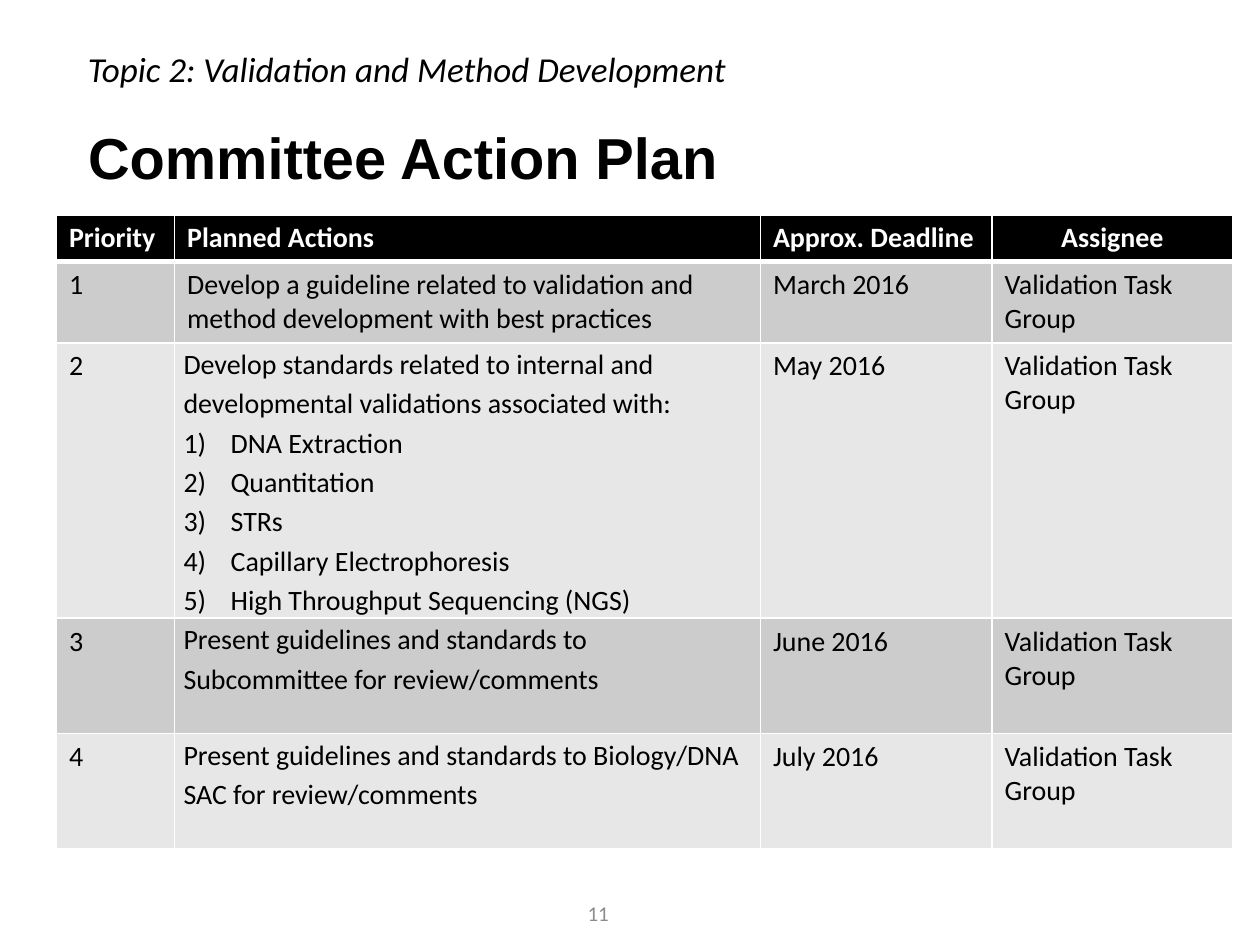
from lxml import etree
from pptx import Presentation
from pptx import util as u
from pptx.dml.color import RGBColor
from pptx.enum import text
from pptx.oxml.ns import qn

COLORS = {"black": "000000", "white": "FFFFFF", "odd": "CCCCCC",
          "even": "E7E7E7", "number": "8C8C8C"}
HEADERS = ["Priority", "Planned Actions", "Approx. Deadline", "Assignee"]
# Each action: opening sentence, numbered items, deadline
ACTIONS = [
    ("Develop a guideline related to validation and method development "
     "with best practices", [], "March 2016"),
    ("Develop standards related to internal and developmental validations "
     "associated with:",
     ["DNA Extraction", "Quantitation", "STRs", "Capillary Electrophoresis",
      "High Throughput Sequencing (NGS)"], "May 2016"),
    ("Present guidelines and standards to Subcommittee for review/comments",
     [], "June 2016"),
    ("Present guidelines and standards to Biology/DNA SAC for review/comments",
     [], "July 2016"),
]
ASSIGNEE = "Validation Task Group"
COLUMN_WIDTHS = [2.38, 11.81, 4.67, 4.85]
ROW_HEIGHTS = [0.93, 1.63, 5.54, 2.32, 2.32]


def color(name):
    return RGBColor.from_string(COLORS[name])


def add_span(para, words, size, shade="black", face="Calibri",
             bold=False, italic=False):
    span = para.add_run()
    span.text = words
    font = span.font
    font.size, font.name = u.Pt(size), face
    font.bold, font.italic = bold, italic
    font.color.rgb = color(shade)


def add_title(page, words):
    title = page.shapes.title
    title.left, title.top = u.Cm(1.52), u.Cm(1.4)
    title.width, title.height = u.Cm(21.9), u.Cm(3.68)
    frame = title.text_frame
    frame.auto_size = text.MSO_AUTO_SIZE.NONE
    frame.vertical_anchor = text.MSO_ANCHOR.MIDDLE
    para = frame.paragraphs[0]
    para.alignment = text.PP_ALIGN.LEFT
    para.line_spacing = 0.9
    add_span(para, words, 33, face="Arial", bold=True)


def add_label(page, place, words, align, anchor, **style):
    box = page.shapes.add_textbox(*map(u.Cm, place))
    frame = box.text_frame
    frame.word_wrap = True
    frame.vertical_anchor = anchor
    para = frame.paragraphs[0]
    para.alignment = align
    add_span(para, words, **style)


def set_borders(cell, top=1, bottom=1):
    properties = cell._tc.get_or_add_tcPr()
    widths = {"lnL": 1, "lnR": 1, "lnT": top, "lnB": bottom}
    for index, (side, width) in enumerate(widths.items()):
        line = etree.Element(qn(f"a:{side}"), w=str(u.Pt(width)))
        fill = etree.SubElement(line, qn("a:solidFill"))
        etree.SubElement(fill, qn("a:srgbClr"), val=COLORS["white"])
        properties.insert(index, line)


def paint(cell, shade):
    cell.fill.solid()
    cell.fill.fore_color.rgb = color(shade)


def number_item(para):
    properties = para._p.get_or_add_pPr()
    indent = u.Cm(0.95)
    properties.set("marL", str(indent))
    properties.set("indent", str(-indent))
    etree.SubElement(properties, qn("a:buFont"), typeface="+mj-lt")
    etree.SubElement(properties, qn("a:buAutoNum"), type="arabicParenR")


def fill_action(cell, sentence, items, spaced):
    frame = cell.text_frame
    add_span(frame.paragraphs[0], sentence, 16)
    for item in items:
        para = frame.add_paragraph()
        number_item(para)
        add_span(para, item, 16)
    if spaced:
        cell.margin_left = cell.margin_right = u.Cm(0.18)
        cell.margin_top = cell.margin_bottom = 0
        for para in frame.paragraphs:
            para.line_spacing = 1.15


def add_plan(page):
    frame = page.shapes.add_table(
        len(ROW_HEIGHTS), len(COLUMN_WIDTHS), u.Cm(1.14), u.Cm(4.33),
        u.Cm(sum(COLUMN_WIDTHS)), u.Cm(sum(ROW_HEIGHTS)))
    table = frame.table
    for column, width in zip(table.columns, COLUMN_WIDTHS):
        column.width = u.Cm(width)
    for row, height in zip(table.rows, ROW_HEIGHTS):
        row.height = u.Cm(height)

    # Header row
    for cell, words in zip(table.rows[0].cells, HEADERS):
        paint(cell, "black")
        set_borders(cell, bottom=3)
        cell.vertical_anchor = text.MSO_ANCHOR.MIDDLE
        add_span(cell.text_frame.paragraphs[0], words, 16, "white", bold=True)
    table.cell(0, 3).text_frame.paragraphs[0].alignment = text.PP_ALIGN.CENTER

    # One row per action, with alternating fills
    for number, (sentence, items, deadline) in enumerate(ACTIONS, 1):
        cells = list(table.rows[number].cells)
        for cell in cells:
            paint(cell, "odd" if number % 2 else "even")
            set_borders(cell, top=3 if number == 1 else 1)
        fill_action(cells[1], sentence, items, spaced=number > 1)
        for index, words in ((0, str(number)), (2, deadline), (3, ASSIGNEE)):
            add_span(cells[index].text_frame.paragraphs[0], words, 16)


def main():
    deck = Presentation()
    deck.slide_width, deck.slide_height = u.Cm(25.4), u.Cm(19.05)
    page = deck.slides.add_slide(deck.slide_layouts[5])
    add_title(page, "Committee Action Plan")
    add_plan(page)
    # Topic line and page number
    add_label(page, (1.52, 0.84, 18.69, 1.12),
              "Topic 2: Validation and Method Development",
              text.PP_ALIGN.LEFT, text.MSO_ANCHOR.TOP, size=20, italic=True)
    add_label(page, (9.2, 17.9, 5.72, 1.02), "11", text.PP_ALIGN.CENTER,
              text.MSO_ANCHOR.MIDDLE, size=12, shade="number")
    deck.save("out.pptx")


if __name__ == "__main__":
    main()
